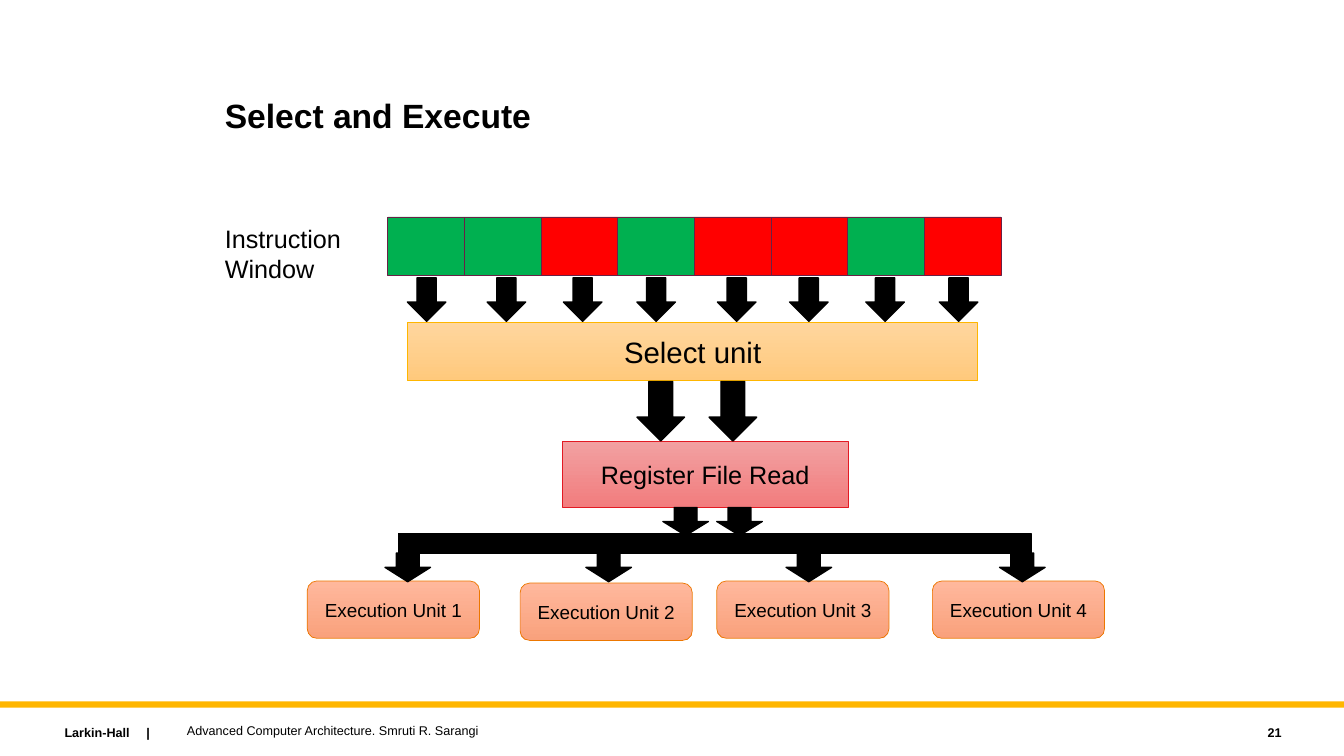
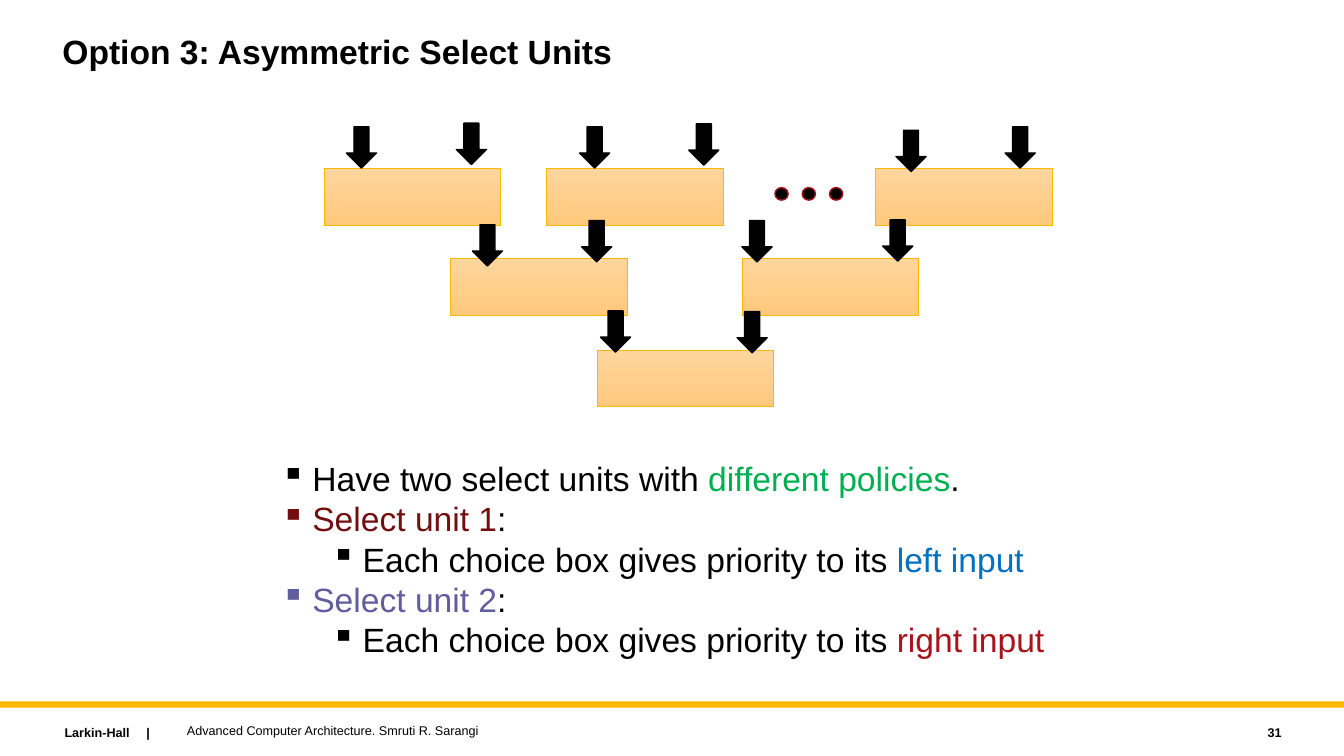
from pptx import Presentation
from pptx.dml.color import RGBColor
from pptx.enum.shapes import MSO_SHAPE as Geo
from pptx.enum.text import MSO_ANCHOR as Anchor, PP_ALIGN as Align
from pptx.oxml.ns import qn
from pptx.util import Pt
from lxml.etree import SubElement

FONT = "Arial"
HEX = {
    "black": "000000", "gold": "FFB600", "green": "00B050", "red": "FF0000",
    "plum": "692146", "crimson": "E21A23", "orange": "EC7700",
    "wine": "A7131A", "maroon": "720F11", "blue": "0070C0",
    "violet": "625D9C", "ruby": "AA131A",
}
# Gradient top, gradient bottom, outline
AMBER = ("FFD69E", "FFC97C", "gold")
ROSE = ("F2A0A1", "F27D7E", "crimson")
PEACH = ("FFB89D", "F9A17C", "orange")

PRESS = "Larkin-Hall"
BOOK = "Advanced Computer Architecture. Smruti R. Sarangi"

# Select and Execute
READY = [True, True, False, True, False, False, True, False]
CELL_X, CELL_Y, CELL_W, CELL_H = 277, 155, 54.75, 42
FLOWS = [  # lefts, top, width, height
    ([291, 348, 402.5, 455, 512.5, 564, 618.5, 671], 198.5, 27.5, 31),
    ([455, 506.5], 272.5, 34, 42.5),
    ([473.5, 512], 362.5, 32.5, 20),
    ([275, 418.5, 561.5, 714], 395, 32.5, 20.5),
]
STAGES = [  # label, size, colours, place
    ("Select unit", 21, AMBER, (291, 230.5, 407.5, 41.5)),
    ("Register File Read", 18, ROSE, (401.5, 315.5, 204.5, 47)),
]
BUS = (284.5, 381, 452, 14)
UNITS = [(219.5, 415), (371.5, 416.5), (512, 415), (666, 415)]

# Asymmetric Select Units
NODES = [
    (120.5, [231.5, 390.5, 625.5]),
    (184.5, [322, 530]),
    (250, [426.5]),
]
INPUTS = [
    (247.5, 90.5), (326, 88), (414, 90.5), (492, 88.5), (640, 93), (718, 90.5),
    (337.5, 160.5), (415.5, 157.5), (530, 157.5), (630.5, 157),
    (429, 222), (526.5, 222.5),
]
DOTS = [553.5, 573, 592.5]
POINTS = [  # level, runs
    (0, [("Have two select units with ", "black"),
         ("different policies", "green"), (".", "black")]),
    (0, [("Select unit 1", "maroon"), (":", "black")]),
    (1, [("Each choice box gives priority to its ", "black"),
         ("left input", "blue")]),
    (0, [("Select unit 2", "violet"), (":", "black")]),
    (1, [("Each choice box gives priority to its ", "black"),
         ("right input", "ruby")]),
]


def rgb(name):
    return RGBColor.from_string(HEX.get(name, name))


def style(font, size, color="black", bold=False):
    font.name, font.size, font.bold = FONT, Pt(size), bold
    font.color.rgb = rgb(color)


def shape(slide, geo, place, fill, line=None, width=1):
    """Add a preset shape; a tuple as fill means gradient and outline."""
    item = slide.shapes.add_shape(geo, *map(Pt, place))
    item.shadow.inherit = False
    if isinstance(fill, tuple):
        top, base, line = fill
        item.fill.gradient()
        item.fill.gradient_angle = 270
        for stop, color in zip(item.fill.gradient_stops, (top, base)):
            stop.color.rgb = rgb(color)
    else:
        item.fill.solid()
        item.fill.fore_color.rgb = rgb(fill)
    if line:
        item.line.color.rgb = rgb(line)
        item.line.width = Pt(width)
    else:
        item.line.fill.background()
    return item


def arrow(slide, *place):
    shape(slide, Geo.DOWN_ARROW, place, "black", "black")


def box(slide, geo, place, colors, label="", size=18):
    item = shape(slide, geo, place, colors, width=0.5)
    if label:
        frame = item.text_frame
        frame.text = label
        frame.vertical_anchor = Anchor.MIDDLE
        para = frame.paragraphs[0]
        para.alignment = Align.CENTER
        style(para.runs[0].font, size)


def label(slide, text, place, size=9, bold=False, align=Align.LEFT,
          anchor=Anchor.TOP, space=None):
    frame = slide.shapes.add_textbox(*map(Pt, place)).text_frame
    frame.word_wrap = True
    frame.vertical_anchor = anchor
    frame.text = text
    for para in frame.paragraphs:
        para.alignment = align
        para.line_spacing = space
        for run in para.runs:
            style(run.font, size, bold=bold)


def bullets(slide, points, place):
    frame = slide.shapes.add_textbox(*map(Pt, place)).text_frame
    frame.word_wrap = True
    for i, (level, runs) in enumerate(points):
        para = frame.add_paragraph() if i else frame.paragraphs[0]
        para.level = level
        props = para._p.get_or_add_pPr()
        props.set("marL", str(Pt(22.5 + 36 * level)))
        props.set("indent", str(-Pt(22.5)))
        SubElement(props, qn("a:buChar")).set("char", "▪")
        for text, color in runs:
            run = para.add_run()
            run.text = text
            style(run.font, 24, color)


def start(deck, title, place, number):
    """Add a slide with its title, band and footer."""
    slide = deck.slides.add_slide(deck.slide_layouts[6])
    shape(slide, Geo.RECTANGLE, (0, 501, 960, 4.5), "gold")
    label(slide, PRESS, (39, 514, 90, 18), bold=True)
    label(slide, "|", (97.5, 514, 20, 18), bold=True)
    label(slide, BOOK, (126.5, 512.5, 576, 18), anchor=Anchor.MIDDLE)
    label(slide, str(number), (821.5, 514, 101, 18), bold=True,
          align=Align.RIGHT, anchor=Anchor.MIDDLE)
    label(slide, title, place, 24, bold=True, space=0.9)
    return slide


def execute(deck):
    slide = start(deck, "Select and Execute", (153.5, 67.5, 620.5, 78.5), 21)
    label(slide, "Instruction\nWindow", (153.5, 156, 104, 51), 18)
    for i, ready in enumerate(READY):
        shape(slide, Geo.RECTANGLE,
              (CELL_X + i * CELL_W, CELL_Y, CELL_W, CELL_H),
              "green" if ready else "red", "plum", 0.5)
    for text, size, colors, place in STAGES:
        box(slide, Geo.RECTANGLE, place, colors, text, size)
    for i, (x, y) in enumerate(UNITS, 1):
        box(slide, Geo.ROUNDED_RECTANGLE, (x, y, 123, 41), PEACH,
            f"Execution Unit {i}", 13.5)
    for lefts, y, w, h in FLOWS:
        for x in lefts:
            arrow(slide, x, y, w, h)
    shape(slide, Geo.RECTANGLE, BUS, "black", "black")


def options(deck):
    slide = start(deck, "Option 3: Asymmetric Select Units",
                  (37.5, 21.5, 720, 65), 31)
    for y, lefts in NODES:
        for x in lefts:
            box(slide, Geo.RECTANGLE, (x, y, 126, 40.5), AMBER)
    for x in DOTS:
        shape(slide, Geo.OVAL, (x, 134, 9.5, 9), "black", "wine")
    for x, y in INPUTS:
        arrow(slide, x, y, 21.5, 29.5)
    bullets(slide, POINTS, (193.5, 323.5, 572.5, 152.5))


def main():
    deck = Presentation()
    deck.slide_width, deck.slide_height = Pt(960), Pt(540)
    execute(deck)
    options(deck)
    deck.save("out.pptx")


if __name__ == "__main__":
    main()
